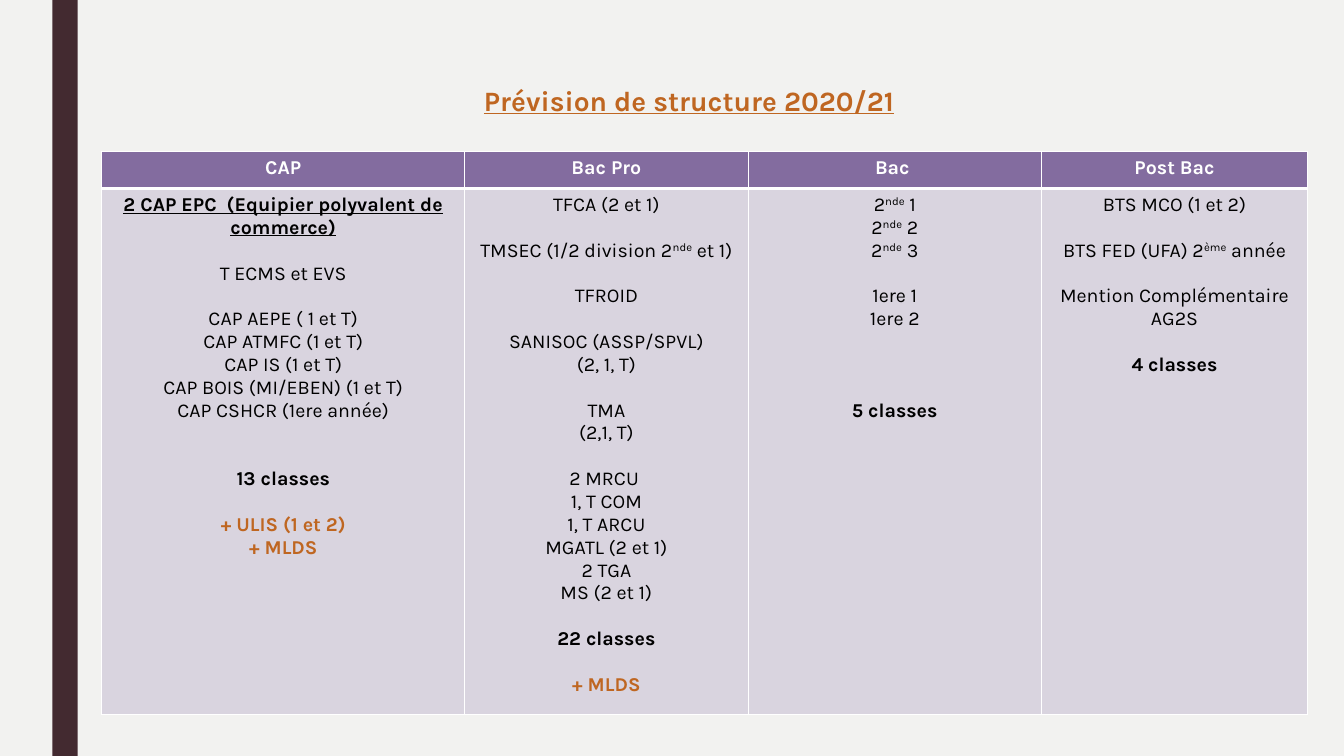
from lxml.etree import SubElement
from pptx import Presentation
from pptx.dml.color import RGBColor
from pptx.enum.shapes import MSO_SHAPE
from pptx.enum.text import MSO_ANCHOR, MSO_AUTO_SIZE, PP_ALIGN
from pptx.oxml.ns import qn
from pptx.util import Inches, Pt

COLORS = {
    "background": "F2F2F0",
    "bar": "432A30",
    "accent": "BF6621",
    "header": "836C9F",
    "body": "D9D4DF",
    "white": "FFFFFF",
    "black": "000000",
}
STYLES = {
    "title": ("accent", True, True, 20),
    "header": ("white", True, False, 14),
    "plain": ("black", False, False, 14),
    "heading": ("black", True, True, 14),
    "total": ("black", True, False, 14),
    "extra": ("accent", True, False, 14),
}
LINE_PITCH = 16.3


def add_text(para, text, style):
    color, bold, underline, size = STYLES[style]
    para.alignment = PP_ALIGN.CENTER
    for index, piece in enumerate(text.split("^")):
        span = para.add_run()
        span.text = piece
        span.font.name = "Karla"
        span.font.size = Pt(size)
        span.font.bold = bold
        span.font.underline = underline
        span.font.color.rgb = RGBColor.from_string(COLORS[color])
        if index % 2:
            span.font._element.set("baseline", "30000")


def format_cell(cell, fill, top, bottom):
    cell.fill.solid()
    cell.fill.fore_color.rgb = RGBColor.from_string(COLORS[fill])
    properties = cell._tc.get_or_add_tcPr()
    borders = [("a:lnL", 1), ("a:lnR", 1), ("a:lnT", top), ("a:lnB", bottom)]
    for position, (tag, width) in enumerate(borders):
        line = SubElement(properties, qn(tag), w=str(Pt(width)))
        solid = SubElement(line, qn("a:solidFill"))
        SubElement(solid, qn("a:srgbClr"), val=COLORS["white"])
        properties.insert(position, line)


deck = Presentation()
deck.slide_width = Inches(13.33)
deck.slide_height = Inches(7.5)
page = deck.slides.add_slide(deck.slide_layouts[5])
page.background.fill.solid()
page.background.fill.fore_color.rgb = RGBColor.from_string(COLORS["background"])

bar = page.shapes.add_shape(
    MSO_SHAPE.RECTANGLE, Inches(0.52), 0, Inches(0.25), Inches(7.5)
)
bar.shadow.inherit = False
bar.fill.solid()
bar.fill.fore_color.rgb = RGBColor.from_string(COLORS["bar"])
bar.line.fill.background()

title = page.shapes.title
title.left, title.top = Inches(1.03), Inches(0.56)
title.width, title.height = Inches(11.61), Inches(0.72)
frame = title.text_frame
frame.auto_size = MSO_AUTO_SIZE.NONE
frame.vertical_anchor = MSO_ANCHOR.MIDDLE
frame.margin_top, frame.margin_bottom = Inches(0.21), Inches(0.05)
add_text(frame.paragraphs[0], "Prévision de structure 2020/21", "title")

# Each entry: empty lines before, text, style
columns = [
    ("CAP", 3.6, [
        (0, "2 CAP EPC  (Equipier polyvalent de commerce)", "heading"),
        (1, "T ECMS et EVS", "plain"),
        (1, "CAP AEPE ( 1 et T)", "plain"),
        (0, "CAP ATMFC (1 et T)", "plain"),
        (0, "CAP IS (1 et T)", "plain"),
        (0, "CAP BOIS (MI/EBEN) (1 et T)", "plain"),
        (0, "CAP CSHCR (1ere année)", "plain"),
        (2, "13 classes", "total"),
        (1, "+ ULIS (1 et 2)", "extra"),
        (0, "+ MLDS", "extra"),
    ]),
    ("Bac Pro", 2.81, [
        (0, "TFCA (2 et 1)", "plain"),
        (1, "TMSEC (1/2 division 2^nde^ et 1)", "plain"),
        (1, "TFROID", "plain"),
        (1, "SANISOC (ASSP/SPVL)", "plain"),
        (0, "(2, 1, T)", "plain"),
        (1, "TMA", "plain"),
        (0, "(2,1, T)", "plain"),
        (1, "2 MRCU ", "plain"),
        (0, "1, T COM", "plain"),
        (0, "1, T ARCU", "plain"),
        (0, "MGATL (2 et 1)", "plain"),
        (0, "2 TGA", "plain"),
        (0, "MS (2 et 1)", "plain"),
        (1, "22 classes", "total"),
        (1, "+ MLDS", "extra"),
    ]),
    ("Bac ", 2.91, [
        (0, "2^nde^ 1", "plain"),
        (0, "2^nde^ 2", "plain"),
        (0, "2^nde^ 3", "plain"),
        (1, "1ere 1", "plain"),
        (0, "1ere 2", "plain"),
        (3, "5 classes", "total"),
    ]),
    ("Post Bac", 2.64, [
        (0, "BTS MCO (1 et 2)", "plain"),
        (1, "BTS FED (UFA) 2^ème^ année", "plain"),
        (1, "Mention Complémentaire AG2S", "plain"),
        (1, "4 classes", "total"),
    ]),
]

table = page.shapes.add_table(
    2, len(columns), Inches(1.01), Inches(1.5), Inches(11.96), Inches(5.59)
).table
table.horz_banding = False
table.rows[0].height = Inches(0.37)
table.rows[1].height = Inches(5.22)

for index, (heading, width, entries) in enumerate(columns):
    table.columns[index].width = Inches(width)
    header, body = table.cell(0, index), table.cell(1, index)
    format_cell(header, "header", 1, 3)
    format_cell(body, "body", 3, 1)
    add_text(header.text_frame.paragraphs[0], heading, "header")
    for order, (gap, text, style) in enumerate(entries):
        frame = body.text_frame
        para = frame.add_paragraph() if order else frame.paragraphs[0]
        para.space_before = Pt(gap * LINE_PITCH)
        add_text(para, text, style)

deck.save("out.pptx")
